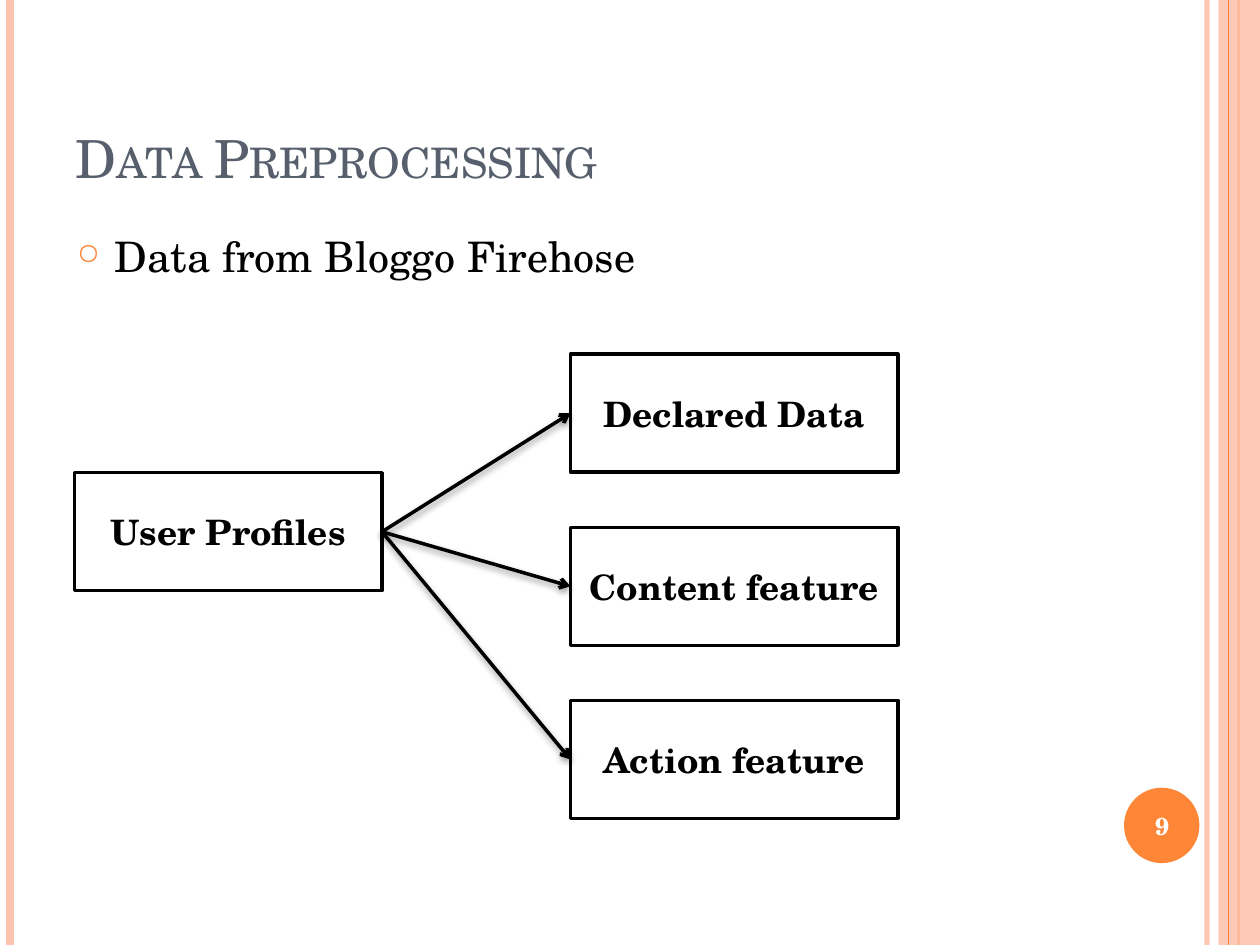
from lxml import etree
from pptx import Presentation, util as u
from pptx.dml.color import RGBColor
from pptx.enum import shapes, text
from pptx.oxml import ns

FONT = "TeX Gyre Schola"
COLORS = {
    "orange": "FE8637",
    "peach": "FEC3AE",
    "slate": "575F6D",
    "black": "000000",
    "white": "FFFFFF",
}
SLIDE_W, SLIDE_H = u.Cm(25.4), u.Cm(19.05)
LEFT_SITE, RIGHT_SITE = 1, 3


def rgb(name):
    return RGBColor.from_string(COLORS[name])


def sub(parent, tag, **attrs):
    el = etree.SubElement(parent, ns.qn(tag))
    for key, value in attrs.items():
        el.set(key, str(value))
    return el


def set_alpha(fill_parent, percent):
    color = fill_parent.find(".//" + ns.qn("a:srgbClr"))
    sub(color, "a:alpha", val=percent * 1000)


def write(sp, content, size, color, bold=False,
          align=text.PP_ALIGN.LEFT, anchor=text.MSO_ANCHOR.MIDDLE):
    tf = sp.text_frame
    tf.word_wrap = True
    tf.vertical_anchor = anchor
    p = tf.paragraphs[0]
    p.text = content
    p.alignment = align
    p.font.name, p.font.size, p.font.bold = FONT, u.Pt(size), bold
    p.font.color.rgb = rgb(color)
    return p


def add_text(s, at, *args, **kwargs):
    sp = s.shapes.add_textbox(*map(u.Cm, at))
    return write(sp, *args, **kwargs)


def add_shape(s, kind, at, fill, line=None):
    sp = s.shapes.add_shape(kind, *map(u.Cm, at))
    sp.shadow.inherit = False
    sp.fill.solid()
    sp.fill.fore_color.rgb = rgb(fill)
    if line:
        sp.line.color.rgb = rgb(line)
        sp.line.width = u.Pt(2)
    else:
        sp.line.fill.background()
    return sp


def add_line(s, start, end, color, width):
    line = s.shapes.add_connector(shapes.MSO_CONNECTOR.STRAIGHT, *start, *end)
    line.line.color.rgb = rgb(color)
    line.line.width = u.Pt(width)
    effects = sub(line._element.spPr, "a:effectLst")
    return line, effects


def add_stripe(s, x, color, width):
    return add_line(s, (u.Cm(x), 0), (u.Cm(x), SLIDE_H), color, width)[0]


def add_box(s, x, y, width, label):
    sp = add_shape(s, shapes.MSO_SHAPE.RECTANGLE, (x, y, width, 2.38),
                   "white", "black")
    write(sp, label, 20, "black", bold=True, align=text.PP_ALIGN.CENTER)
    return sp


def add_arrow(s, source, target):
    line, effects = add_line(s, (0, 0), (0, 0), "black", 2)
    line.begin_connect(source, RIGHT_SITE)
    line.end_connect(target, LEFT_SITE)
    sub(line.line._get_or_add_ln(), "a:tailEnd", type="arrow")
    shadow = sub(effects, "a:outerShdw", blurRad=u.Pt(4), dist=u.Pt(2),
                 dir=90 * 60000, rotWithShape=0)
    sub(shadow, "a:srgbClr", val=COLORS["black"])
    set_alpha(effects, 40)


def add_frame(s):
    inner = add_stripe(s, 24.33, "peach", 3)
    set_alpha(inner.line._get_or_add_ln(), 93)
    add_stripe(s, 0.2, "peach", 4.5)
    add_stripe(s, 24.97, "orange", 1.5)
    band = add_shape(s, shapes.MSO_SHAPE.RECTANGLE,
                     (24.56, 0, 0.84, 19.05), "peach")
    set_alpha(band._element.spPr, 87)
    add_stripe(s, 24.77, "orange", 0.75)


def add_title(s, content):
    p = add_text(s, (1.27, 0.76, 20.75, 3.18), content, 30, "slate",
                 anchor=text.MSO_ANCHOR.BOTTOM)
    p.font._rPr.set("cap", "small")


def add_bullet(s, content):
    p = add_text(s, (1.3, 4.52, 20.75, 13.54), content, 24, "black",
                 anchor=text.MSO_ANCHOR.TOP)
    p.space_before = u.Pt(6)
    pPr = p._p.get_or_add_pPr()
    pPr.set("marL", str(u.Cm(0.76)))
    pPr.set("indent", str(u.Cm(-0.76)))
    bullet_color = etree.Element(ns.qn("a:buClr"))
    sub(bullet_color, "a:srgbClr", val=COLORS["orange"])
    bullet_size = etree.Element(ns.qn("a:buSzPct"), val="70000")
    bullet_char = etree.Element(ns.qn("a:buChar"), char="○")
    defaults = pPr.find(ns.qn("a:defRPr"))
    for el in (bullet_color, bullet_size, bullet_char):
        defaults.addprevious(el)


def add_page_number(s, number):
    add_shape(s, shapes.MSO_SHAPE.OVAL, (22.66, 15.88, 1.52, 1.52), "orange")
    add_text(s, (22.58, 15.93, 1.7, 1.45), number, 14, "white", bold=True,
             align=text.PP_ALIGN.CENTER)


def main():
    prs = Presentation()
    prs.slide_width, prs.slide_height = SLIDE_W, SLIDE_H
    s = prs.slides.add_slide(prs.slide_layouts[6])
    add_frame(s)
    add_title(s, "Data Preprocessing")
    add_bullet(s, "Data from Bloggo Firehose")
    profiles = add_box(s, 1.5, 9.53, 6.2, "User Profiles")
    labels = ("Declared Data", "Content feature", "Action feature")
    targets = [add_box(s, 11.5, 7.14 + 3.49 * i, 6.6, label)
               for i, label in enumerate(labels)]
    for target in targets:
        add_arrow(s, profiles, target)
    add_page_number(s, "9")
    prs.save("out.pptx")


if __name__ == "__main__":
    main()
